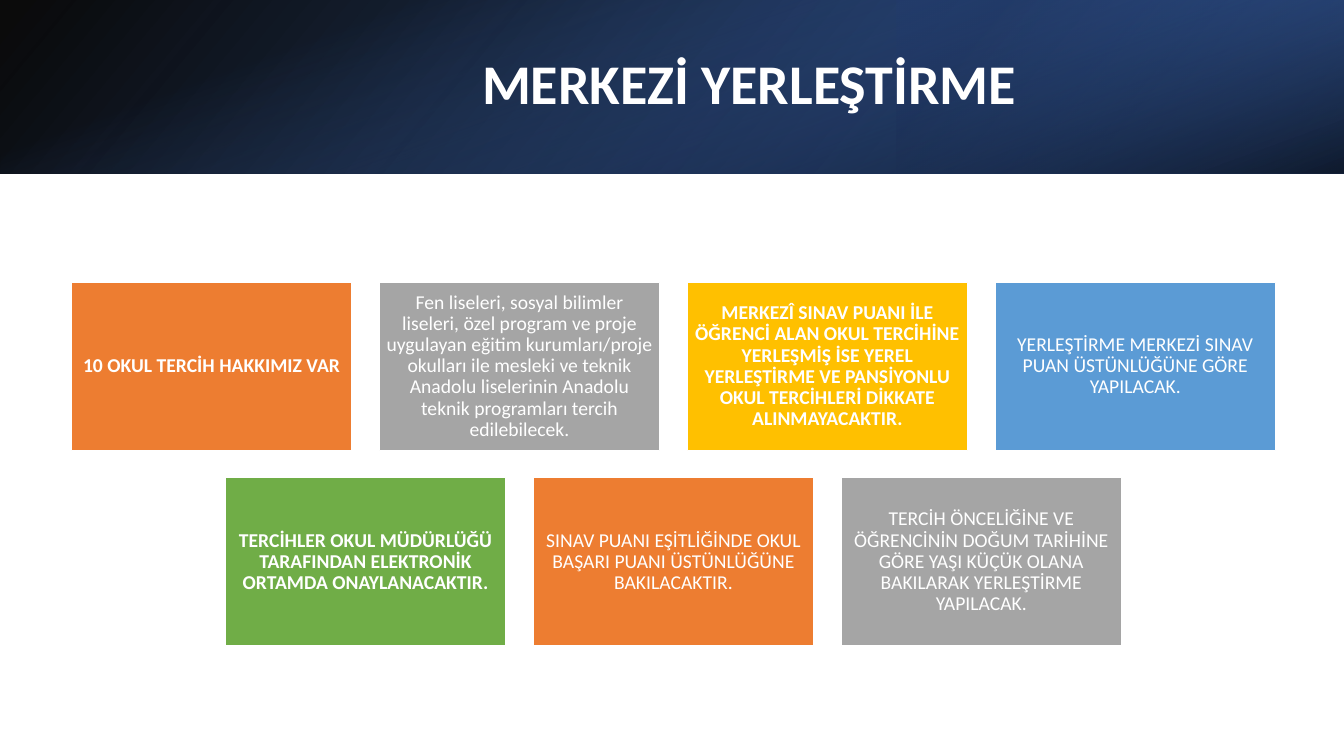
from lxml import etree
from pptx import Presentation
from pptx.dml.color import RGBColor
from pptx.enum.shapes import MSO_SHAPE as Shape
from pptx.enum.text import MSO_ANCHOR as Anchor, PP_ALIGN as Align
from pptx.oxml.ns import qn
from pptx.util import Inches, Pt

COLORS = {
    "white": "FFFFFF", "black": "000000",
    "blue": "4472C4", "deep blue": "2F5597", "navy": "203864",
    "orange": "ED7D31", "gray": "A5A5A5", "yellow": "FFC000",
    "sky": "5B9BD5", "green": "70AD47",
}
FONT = "Calibri"
TITLE_ONLY = 5

SLIDE_WIDTH, SLIDE_HEIGHT = 13.33, 7.5
BAND_HEIGHT = 1.72
CARD_WIDTH, CARD_HEIGHT = 2.78, 1.67
FIRST_LEFT, LAST_LEFT = 0.71, 9.87
CARD_STEP = (LAST_LEFT - FIRST_LEFT) / 3
FIRST_TOP, ROW_STEP = 2.8, 1.94

# Each card: text, fill colour, bold
CARD_ROWS = [
    [
        ("10 OKUL TERCİH HAKKIMIZ VAR", "orange", True),
        ("Fen liseleri, sosyal bilimler liseleri, özel program ve proje "
         "uygulayan eğitim kurumları/proje okulları ile mesleki ve teknik "
         "Anadolu liselerinin Anadolu teknik programları tercih edilebilecek.",
         "gray", False),
        ("MERKEZÎ SINAV PUANI İLE ÖĞRENCİ ALAN OKUL TERCİHİNE YERLEŞMİŞ İSE "
         "YEREL YERLEŞTİRME VE PANSİYONLU OKUL TERCİHLERİ DİKKATE "
         "ALINMAYACAKTIR.", "yellow", True),
        ("YERLEŞTİRME MERKEZİ SINAV PUAN ÜSTÜNLÜĞÜNE GÖRE YAPILACAK.",
         "sky", False),
    ],
    [
        ("TERCİHLER OKUL MÜDÜRLÜĞÜ TARAFINDAN ELEKTRONİK ORTAMDA "
         "ONAYLANACAKTIR.", "green", True),
        ("SINAV PUANI EŞİTLİĞİNDE OKUL BAŞARI PUANI ÜSTÜNLÜĞÜNE "
         "BAKILACAKTIR.", "orange", False),
        ("TERCİH ÖNCELİĞİNE VE ÖĞRENCİNİN DOĞUM TARİHİNE GÖRE YAŞI KÜÇÜK "
         "OLANA BAKILARAK YERLEŞTİRME YAPILACAK.", "gray", False),
    ],
]


class SlideBuilder:
    def __init__(self, deck):
        self.slide = deck.slides.add_slide(deck.slide_layouts[TITLE_ONLY])

    def rectangle(self, left, top, width, height):
        box = self.slide.shapes.add_shape(
            Shape.RECTANGLE, Inches(left), Inches(top), Inches(width), Inches(height))
        box.shadow.inherit = False
        return box

    def add_text(self, frame, text, size, bold):
        frame.word_wrap = True
        frame.vertical_anchor = Anchor.MIDDLE
        para = frame.paragraphs[0]
        para.alignment = Align.CENTER
        para.line_spacing = 0.9
        span = para.add_run()
        span.text = text
        span.font.name = FONT
        span.font.size = Pt(size)
        span.font.bold = bold
        span.font.color.rgb = RGBColor.from_string(COLORS["white"])

    def gradient(self, bounds, stops, angle, rotation=0, flipped=False):
        """Add a rectangle with stops of (position %, colour, opacity %)."""
        box = self.rectangle(*bounds)
        box.line.fill.background()
        box.rotation = rotation
        properties = box._element.spPr
        if flipped:
            properties.find(qn("a:xfrm")).set("flipH", "1")
        fill = etree.Element(qn("a:gradFill"))
        stop_list = etree.SubElement(fill, qn("a:gsLst"))
        for position, color, opacity in stops:
            stop = etree.SubElement(stop_list, qn("a:gs"), pos=str(position * 1000))
            tint = etree.SubElement(stop, qn("a:srgbClr"), val=COLORS[color])
            etree.SubElement(tint, qn("a:alpha"), val=str(opacity * 1000))
        etree.SubElement(fill, qn("a:lin"), ang=str(angle * 60000), scaled="0")
        properties.find(qn("a:prstGeom")).addnext(fill)

    def title(self, text):
        """Fill the title placeholder and raise it above the band."""
        title = self.slide.shapes.title
        title.left, title.top = Inches(1.5), Inches(0.38)
        title.width, title.height = Inches(10.98), Inches(0.96)
        title.text_frame.margin_left = Inches(0.98)
        self.add_text(title.text_frame, text, 40, True)
        self.slide.shapes._spTree.append(title._element)

    def card(self, left, top, text, color, bold):
        box = self.rectangle(left, top, CARD_WIDTH, CARD_HEIGHT)
        box.fill.solid()
        box.fill.fore_color.rgb = RGBColor.from_string(COLORS[color])
        box.line.color.rgb = RGBColor.from_string(COLORS["white"])
        box.line.width = Pt(1)
        frame = box.text_frame
        frame.margin_left = frame.margin_right = Inches(0.06)
        frame.margin_top = frame.margin_bottom = Inches(0.06)
        self.add_text(frame, text, 14, bold)


def main():
    deck = Presentation()
    deck.slide_width, deck.slide_height = Inches(SLIDE_WIDTH), Inches(SLIDE_HEIGHT)
    builder = SlideBuilder(deck)

    builder.gradient((0, 0, SLIDE_WIDTH, BAND_HEIGHT),
                     [(0, "black", 96), (100, "deep blue", 100)], 140, flipped=True)
    builder.gradient((8.89, 0, 4.44, BAND_HEIGHT),
                     [(19, "navy", 68), (100, "blue", 79)], 320, 180, flipped=True)
    # A quarter turn lays this tall rectangle over the whole band
    offset = (SLIDE_WIDTH - BAND_HEIGHT) / 2
    builder.gradient((offset, -offset, BAND_HEIGHT, SLIDE_WIDTH),
                     [(23, "blue", 0), (99, "black", 74)], 340, 90)
    builder.title("MERKEZİ YERLEŞTİRME")

    for row, cards in enumerate(CARD_ROWS):
        indent = (len(CARD_ROWS[0]) - len(cards)) * CARD_STEP / 2
        for column, (text, color, bold) in enumerate(cards):
            builder.card(FIRST_LEFT + indent + column * CARD_STEP,
                         FIRST_TOP + row * ROW_STEP, text, color, bold)

    deck.save("out.pptx")


if __name__ == "__main__":
    main()
